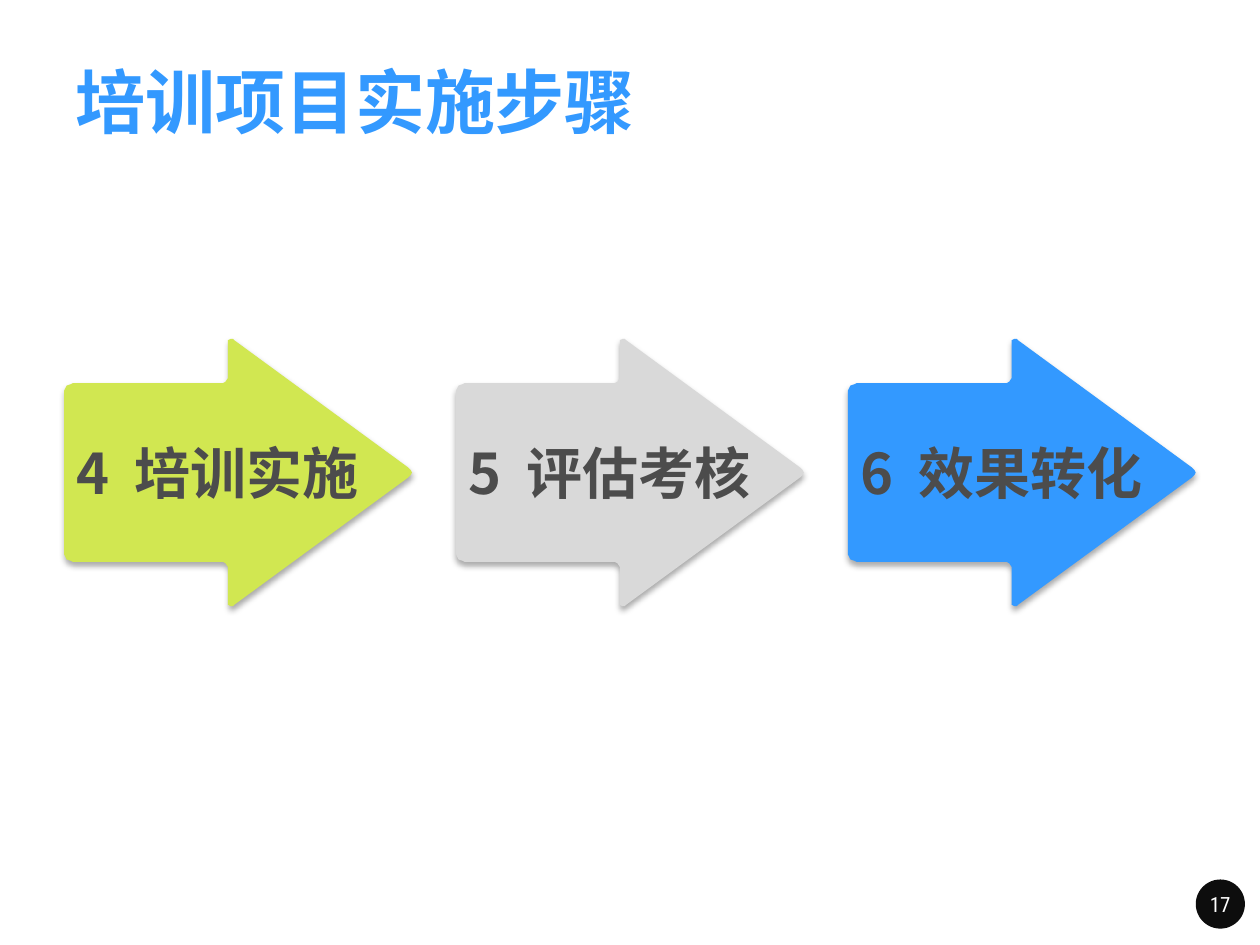
from lxml import etree
from pptx import Presentation
from pptx.dml.color import RGBColor
from pptx.enum import shapes, text
from pptx.oxml.ns import qn
from pptx.util import Pt

PX = 9144
BLUE = RGBColor(0x33, 0x99, 0xFF)
LIME = RGBColor(0xD1, 0xE7, 0x51)
GREY = RGBColor(0xD9, 0xD9, 0xD9)
INK = RGBColor(0x4C, 0x4C, 0x4C)
BLACK = RGBColor(0x0D, 0x0D, 0x0D)
WHITE = RGBColor(0xFF, 0xFF, 0xFF)
SANS, SLIM = "Noto Sans CJK SC", "Roboto Condensed"

TITLE = "培训项目实施步骤"
PAGE = "17"
STEPS = [("4 ", "培训实施", LIME), ("5 ", "评估考核", GREY), ("6 ", "效果转化", BLUE)]
LEFT, MID, PITCH = 51, 375, 311
HALF = [(0, 65), (1, 67), (2, 69), (5, 70), (7, 71), (123, 71), (126, 71),
        (128, 72), (130, 75), (130, 77), (130, 103), (130, 105), (132, 106),
        (134, 106), (135, 105), (273, 4), (275, 2), (276, 0)]
ARROW = HALF + [(x, -y) for x, y in reversed(HALF[:-1])]


def box(*place):
    return [n * PX for n in place]


def write(frame, words, size, font, color, bold=False, align=text.PP_ALIGN.LEFT):
    frame.word_wrap = True
    frame.vertical_anchor = text.MSO_ANCHOR.MIDDLE
    para = frame.paragraphs[0]
    para.alignment = align
    for word in words:
        run = para.add_run()
        run.text = word
        run.font.size = Pt(size)
        run.font.name = font
        run.font.bold = bold
        run.font.color.rgb = color
        etree.SubElement(run._r.get_or_add_rPr(), qn("a:ea"), typeface=font)
    return para


def paint(shape, color):
    shape.shadow.inherit = False
    shape.fill.solid()
    shape.fill.fore_color.rgb = color
    shape.line.fill.background()


def shade(shape):
    glow = etree.SubElement(shape._element.spPr.find(qn("a:effectLst")), qn("a:outerShdw"),
                            blurRad=str(Pt(3.5)), dist=str(Pt(2.2)), dir="5400000",
                            rotWithShape="0")
    tone = etree.SubElement(glow, qn("a:srgbClr"), val="000000")
    etree.SubElement(tone, qn("a:alpha"), val="32000")


def main():
    deck = Presentation()
    deck.slide_width, deck.slide_height = box(1000, 750)
    slide = deck.slides.add_slide(deck.slide_layouts[6])

    badge = slide.shapes.add_shape(shapes.MSO_SHAPE.OVAL, *box(949, 698, 39, 39))
    paint(badge, BLACK)
    frame = badge.text_frame
    frame.margin_left = frame.margin_right = frame.margin_top = frame.margin_bottom = 4 * PX
    write(frame, [PAGE], 12, SLIM, WHITE, align=text.PP_ALIGN.CENTER)

    title = slide.shapes.add_textbox(*box(50, 36, 899, 87))
    write(title.text_frame, [TITLE], 40, SANS, BLUE, True)

    for i, (number, label, color) in enumerate(STEPS):
        left = LEFT + i * PITCH
        points = [(left + x, MID + y) for x, y in ARROW]
        pen = slide.shapes.build_freeform(*points[0], scale=PX)
        pen.add_line_segments(points[1:], close=True)
        arrow = pen.convert_to_shape()
        paint(arrow, color)
        shade(arrow)
        para = write(arrow.text_frame, [number, label], 32, SANS, INK, True)
        para.runs[0]._r.rPr.set("spc", "350")

    deck.save("out.pptx")


if __name__ == "__main__":
    main()
